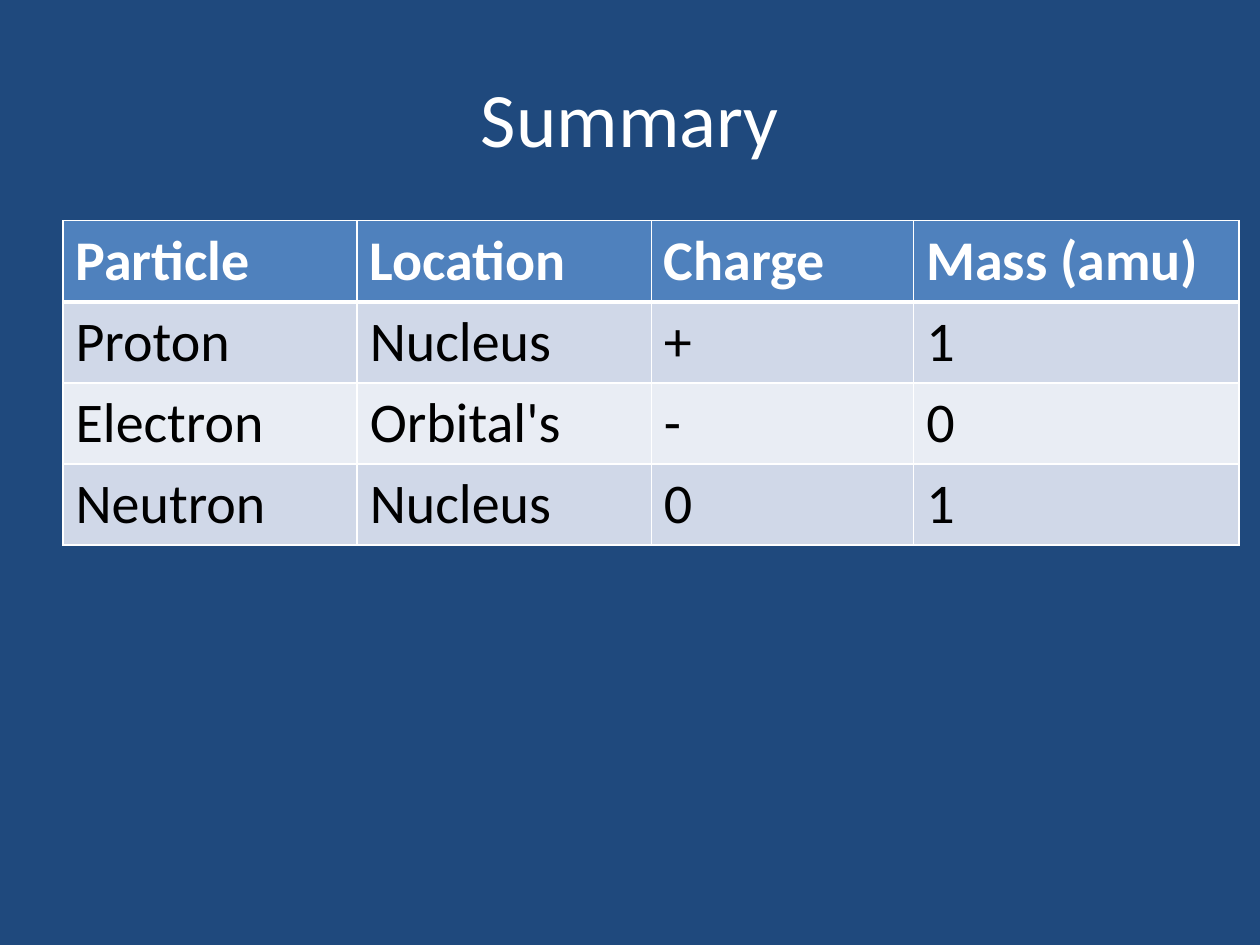
import pptx
import pptx.dml.color
import pptx.enum.text
import pptx.oxml.ns
import pptx.util
from lxml import etree
from pptx.util import Cm

# Content
TITLE = "Summary"
ROWS = [
    ("Particle", "Location", "Charge", "Mass (amu)"),
    ("Proton", "Nucleus", "+", "1"),
    ("Electron", "Orbital's", "-", "0"),
    ("Neutron", "Nucleus", "0", "1"),
]
COLUMN_WIDTHS = (5.93, 5.93, 5.29, 6.56)
ROW_HEIGHT = 1.61

THEME = {
    "font": "Calibri", "title_size": 44, "table_size": 32,
    "background": "1F497D", "light": "FFFFFF", "dark": "000000",
    "header": "4F81BD", "bands": ("D0D8E8", "E9EDF4"),
    "thin": 1, "thick": 3,
}


def color(name):
    return pptx.dml.color.RGBColor.from_string(name)


def write(frame, text, size, ink, bold=False, align=None):
    para = frame.paragraphs[0]
    para.alignment = align
    span = para.add_run()
    span.text = text
    span.font.name = THEME["font"]
    span.font.size = pptx.util.Pt(size)
    span.font.bold = bold
    span.font.color.rgb = color(ink)


def add_borders(cell, **widths):
    """Draw solid cell edges; widths in points, keyed L, R, T, B."""
    properties = cell._tc.get_or_add_tcPr()
    qn = pptx.oxml.ns.qn
    for side, width in widths.items():
        line = etree.SubElement(properties, qn(f"a:ln{side}"), w=str(pptx.util.Pt(width)))
        fill = etree.SubElement(line, qn("a:solidFill"))
        etree.SubElement(fill, qn("a:srgbClr"), val=THEME["light"])


def main():
    deck = pptx.Presentation()
    deck.slide_width, deck.slide_height = Cm(25.4), Cm(19.05)
    page = deck.slides.add_slide(deck.slide_layouts[5])
    page.background.fill.solid()
    page.background.fill.fore_color.rgb = color(THEME["background"])

    # Title
    title = page.shapes.title
    title.left, title.top, title.width, title.height = Cm(1.27), Cm(0.76), Cm(22.86), Cm(3.18)
    title.text_frame.vertical_anchor = pptx.enum.text.MSO_ANCHOR.MIDDLE
    write(title.text_frame, TITLE, THEME["title_size"], THEME["light"],
          align=pptx.enum.text.PP_ALIGN.CENTER)

    # Particle table
    table = page.shapes.add_table(
        len(ROWS), len(COLUMN_WIDTHS), Cm(1.27), Cm(4.45),
        Cm(sum(COLUMN_WIDTHS)), Cm(ROW_HEIGHT * len(ROWS))).table
    for column, width in zip(table.columns, COLUMN_WIDTHS):
        column.width = Cm(width)

    # Header row, then alternating bands
    thin, thick = THEME["thin"], THEME["thick"]
    for r, row in enumerate(ROWS):
        header = r == 0
        fill = THEME["header"] if header else THEME["bands"][(r - 1) % 2]
        ink = THEME["light"] if header else THEME["dark"]
        for c, text in enumerate(row):
            cell = table.cell(r, c)
            add_borders(cell, L=thin, R=thin, T=thick if r == 1 else thin,
                        B=thick if header else thin)
            cell.fill.solid()
            cell.fill.fore_color.rgb = color(fill)
            write(cell.text_frame, text, THEME["table_size"], ink, bold=header)

    deck.save("out.pptx")


if __name__ == "__main__":
    main()
